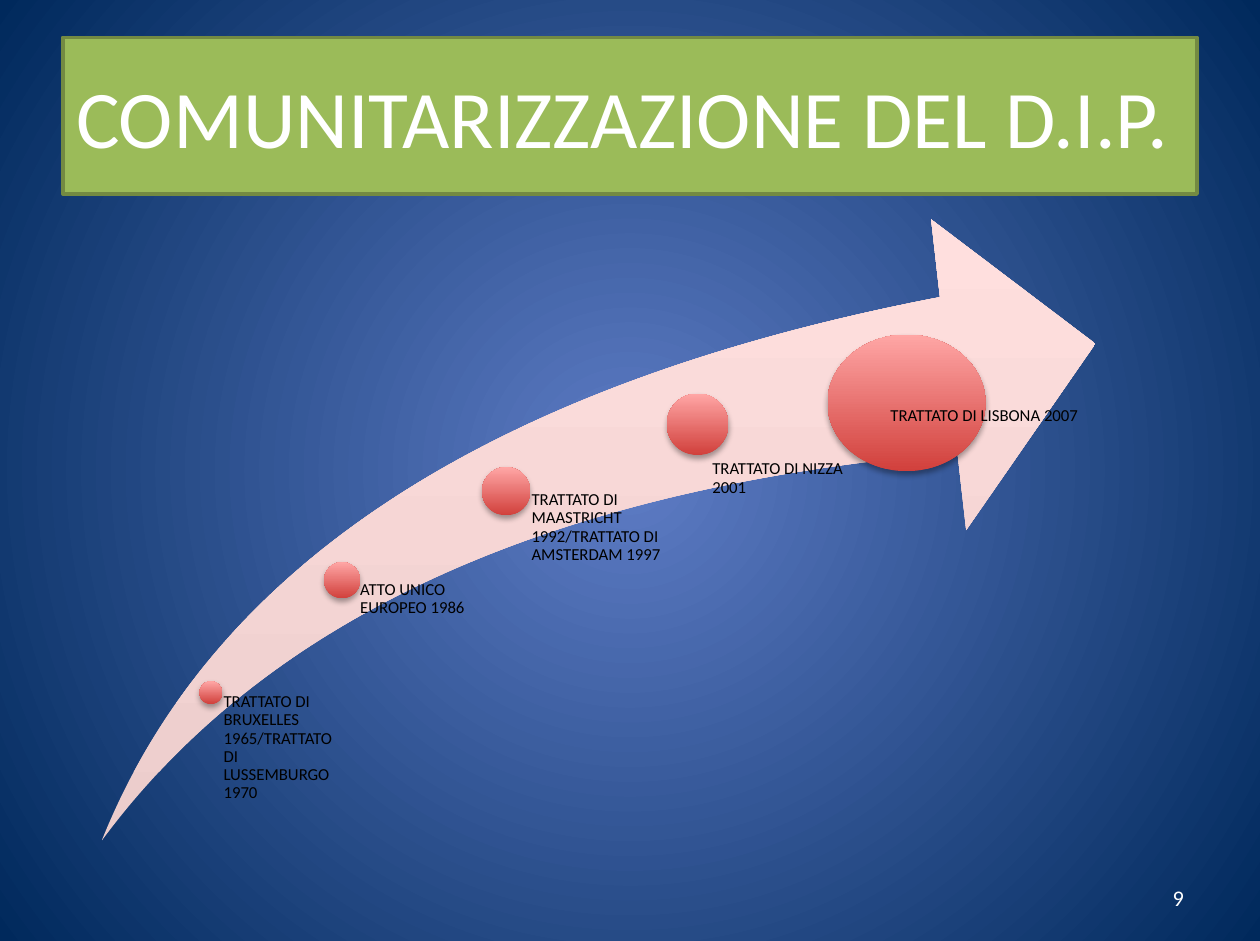
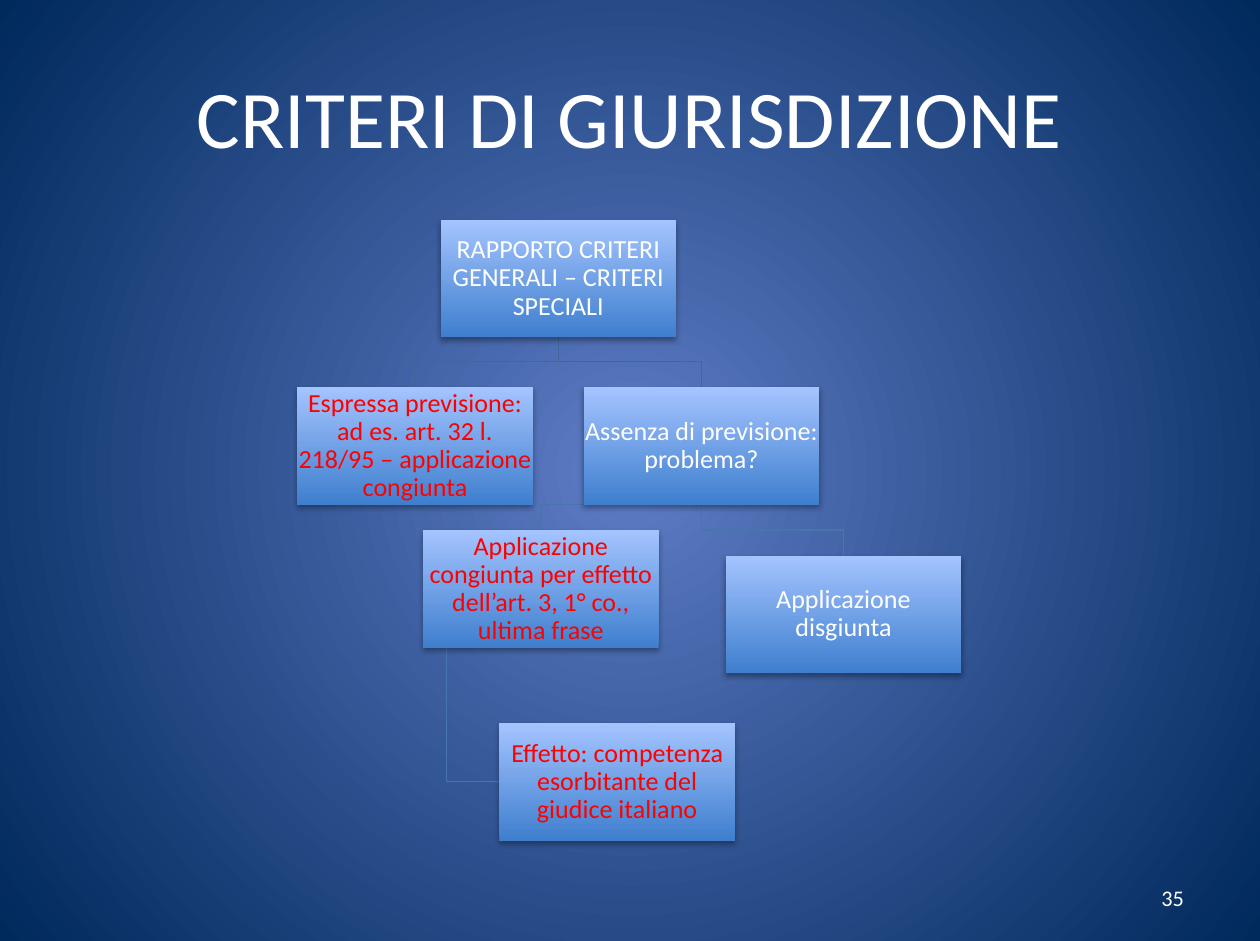
from dataclasses import dataclass

from lxml import etree
from pptx import Presentation
from pptx.dml.color import RGBColor
from pptx.enum.shapes import MSO_SHAPE
from pptx.enum.text import MSO_ANCHOR, PP_ALIGN
from pptx.oxml import parse_xml
from pptx.oxml.ns import nsdecls, qn
from pptx.util import Inches, Pt

# Shared look
FONT = "Calibri"
WHITE = RGBColor(0xFF, 0xFF, 0xFF)
BLACK = RGBColor(0x00, 0x00, 0x00)
RED = RGBColor(0xFF, 0x00, 0x00)
GREEN = RGBColor(0x9B, 0xBB, 0x59)
GREEN_EDGE = RGBColor(0x73, 0x8A, 0x42)
UPPER_LINK = RGBColor(0x3F, 0x67, 0x97)
LOWER_LINK = RGBColor(0x48, 0x75, 0xAC)
BACKGROUND = (RGBColor(0x5E, 0x7C, 0xC5), RGBColor(0x00, 0x29, 0x5C))
# Gradients from bottom to top
ARROW_FILL = (RGBColor(0xEC, 0xCD, 0xCC), RGBColor(0xFF, 0xDF, 0xDE))
DOT_FILL = (RGBColor(0xD1, 0x40, 0x3C), RGBColor(0xFF, 0xA6, 0xA5))
BOX_FILL = (RGBColor(0x3F, 0x7F, 0xCE), RGBColor(0xA4, 0xC4, 0xFF))

LEFT, CENTER, RIGHT, JUSTIFY = PP_ALIGN.LEFT, PP_ALIGN.CENTER, PP_ALIGN.RIGHT, PP_ALIGN.JUSTIFY
TOP, MIDDLE = MSO_ANCHOR.TOP, MSO_ANCHOR.MIDDLE
RECTANGLE, ELLIPSE, SWOOSH = MSO_SHAPE.RECTANGLE, MSO_SHAPE.OVAL, MSO_SHAPE.SWOOSH_ARROW

TITLE_AREA = (0.47, 0.28, 8.47, 1.17)
NUMBER_AREA = (6.74, 6.52, 2.2, 0.37)
TEXT_INSETS = (0.1, 0.05, 0.1, 0.05)
BOX_INSETS = (0, 0.01, 0, 0.01)
BOX_WIDTH, BOX_HEIGHT = 1.76, 0.88
ELBOW_RISE = 0.19

Area = tuple[float, float, float, float]


@dataclass(frozen=True)
class Milestone:
    text: str
    dot: Area
    label: Area
    indent: float


@dataclass(frozen=True)
class Box:
    text: str
    left: float
    top: float
    color: RGBColor = WHITE

    @property
    def center(self) -> float:
        return self.left + BOX_WIDTH / 2

    @property
    def bottom(self) -> float:
        return self.top + BOX_HEIGHT


MILESTONES = [
    Milestone("TRATTATO DI BRUXELLES 1965/TRATTATO DI LUSSEMBURGO 1970",
              (1.49, 5.09, 0.17, 0.17), (1.58, 5.18, 0.97, 1.1), 0.09),
    Milestone("ATTO UNICO EUROPEO 1986",
              (2.42, 4.2, 0.27, 0.27), (2.55, 4.34, 1.23, 1.94), 0.14),
    Milestone("TRATTATO DI MAASTRICHT 1992/TRATTATO DI AMSTERDAM 1997",
              (3.6, 3.49, 0.36, 0.36), (3.78, 3.67, 1.43, 2.61), 0.19),
    Milestone("TRATTATO DI NIZZA 2001",
              (4.98, 2.94, 0.46, 0.46), (5.08, 3.44, 1.23, 0.74), 0.24),
    Milestone("TRATTATO DI LISBONA 2007",
              (6.18, 2.5, 1.18, 1.02), (6.34, 3.04, 2.42, 3.24), 0.31),
]

RELATION = Box("RAPPORTO CRITERI GENERALI – CRITERI SPECIALI", 3.29, 1.64)
EXPRESS = Box("Espressa previsione: ad es. art. 32 l. 218/95 – applicazione congiunta",
              2.22, 2.89, RED)
ABSENCE = Box("Assenza di previsione: problema?", 4.36, 2.89)
JOINT = Box("Applicazione congiunta per effetto dell’art. 3, 1° co., ultima frase",
            3.16, 3.96, RED)
EFFECT = Box("Effetto: competenza esorbitante del giudice italiano", 3.73, 5.4, RED)
SEPARATE = Box("Applicazione disgiunta", 5.42, 4.15)
BOXES = [RELATION, EXPRESS, ABSENCE, JOINT, EFFECT, SEPARATE]
LINKS = [
    (ABSENCE, SEPARATE, LOWER_LINK),
    (ABSENCE, JOINT, LOWER_LINK),
    (RELATION, ABSENCE, UPPER_LINK),
    (RELATION, EXPRESS, UPPER_LINK),
]


# Drawing helpers
def set_gradient(fill, colors: tuple[RGBColor, RGBColor]) -> None:
    fill.gradient()
    fill.gradient_angle = 90
    for stop, color in zip(fill.gradient_stops, colors):
        stop.color.rgb = color


def write(shape, text: str, size: int, color: RGBColor, align, anchor=MIDDLE,
          insets: Area = TEXT_INSETS, line_spacing: float = 1.0) -> None:
    frame = shape.text_frame
    frame.word_wrap = True
    frame.vertical_anchor = anchor
    (frame.margin_left, frame.margin_top,
     frame.margin_right, frame.margin_bottom) = map(Inches, insets)
    paragraph = frame.paragraphs[0]
    paragraph.alignment = align
    paragraph.line_spacing = line_spacing
    run = paragraph.add_run()
    run.text = text
    run.font.name = FONT
    run.font.size = Pt(size)
    run.font.color.rgb = color


def add_plain_shape(slide, kind, area: Area):
    shape = slide.shapes.add_shape(kind, *map(Inches, area))
    shape.shadow.inherit = False
    shape.line.fill.background()
    return shape


def add_gradient_shape(slide, kind, area: Area, colors: tuple[RGBColor, RGBColor],
                       shadow: bool = True):
    shape = add_plain_shape(slide, kind, area)
    set_gradient(shape.fill, colors)
    if shadow:
        effects = shape.element.spPr.find(qn("a:effectLst"))
        effects.append(parse_xml(
            f'<a:outerShdw {nsdecls("a")} blurRad="{Pt(3.1)}" dist="{Pt(1.8)}" '
            'dir="5400000" rotWithShape="0"><a:srgbClr val="000000">'
            '<a:alpha val="35000"/></a:srgbClr></a:outerShdw>'))
    return shape


def add_text(slide, area: Area, text: str, size: int, color: RGBColor, align, **options) -> None:
    write(slide.shapes.add_textbox(*map(Inches, area)), text, size, color, align, **options)


def add_link(slide, points: list[tuple[float, float]], color: RGBColor) -> None:
    start, *others = [(Inches(x), Inches(y)) for x, y in points]
    builder = slide.shapes.build_freeform(*start)
    builder.add_line_segments(others, close=False)
    link = builder.convert_to_shape()
    link.shadow.inherit = False
    link.fill.background()
    link.line.color.rgb = color
    link.line.width = Pt(0.75)


def add_slide(presentation, title: str, number: int, banner: bool = False):
    slide = presentation.slides.add_slide(presentation.slide_layouts[6])
    if banner:
        shape = add_plain_shape(slide, RECTANGLE, TITLE_AREA)
        shape.fill.solid()
        shape.fill.fore_color.rgb = GREEN
        shape.line.color.rgb = GREEN_EDGE
        shape.line.width = Pt(2)
    else:
        shape = slide.shapes.add_textbox(*map(Inches, TITLE_AREA))
    write(shape, title, 44, WHITE, JUSTIFY if banner else CENTER)
    add_text(slide, NUMBER_AREA, str(number), 12, WHITE, RIGHT)
    return slide


def set_background(master) -> None:
    set_gradient(master.background.fill, BACKGROUND)
    linear = next(master.element.iter(qn("a:lin")))
    gradient = linear.getparent()
    gradient.remove(linear)
    circle = etree.SubElement(gradient, qn("a:path"), {"path": "circle"})
    etree.SubElement(circle, qn("a:fillToRect"), dict.fromkeys("ltrb", "50000"))


# Slides
def build_timeline(presentation) -> None:
    slide = add_slide(presentation, "COMUNITARIZZAZIONE DEL D.I.P.", 9, banner=True)
    arrow = add_gradient_shape(slide, SWOOSH, (0.76, 1.64, 7.42, 4.64), ARROW_FILL, shadow=False)
    arrow.adjustments[0] = arrow.adjustments[1] = 0.25
    for milestone in MILESTONES:
        add_gradient_shape(slide, ELLIPSE, milestone.dot, DOT_FILL)
        add_text(slide, milestone.label, milestone.text, 9, BLACK, LEFT, anchor=TOP,
                 insets=(milestone.indent, 0, 0, 0), line_spacing=0.9)


def build_hierarchy(presentation) -> None:
    slide = add_slide(presentation, "CRITERI DI GIURISDIZIONE", 35)
    for parent, child, color in LINKS:
        elbow = child.top - ELBOW_RISE
        add_link(slide, [(parent.center, parent.bottom), (parent.center, elbow),
                         (child.center, elbow), (child.center, child.top)], color)
    stem = JOINT.left + BOX_WIDTH / 10
    middle = EFFECT.top + BOX_HEIGHT / 2
    add_link(slide, [(stem, JOINT.bottom), (stem, middle), (EFFECT.left, middle)], LOWER_LINK)
    for box in BOXES:
        shape = add_gradient_shape(slide, RECTANGLE,
                                   (box.left, box.top, BOX_WIDTH, BOX_HEIGHT), BOX_FILL)
        write(shape, box.text, 14, box.color, CENTER, insets=BOX_INSETS, line_spacing=0.9)


def main() -> None:
    presentation = Presentation()
    presentation.slide_width = Inches(9.41)
    presentation.slide_height = Inches(7.03)
    set_background(presentation.slide_master)
    build_timeline(presentation)
    build_hierarchy(presentation)
    presentation.save("out.pptx")


if __name__ == "__main__":
    main()
